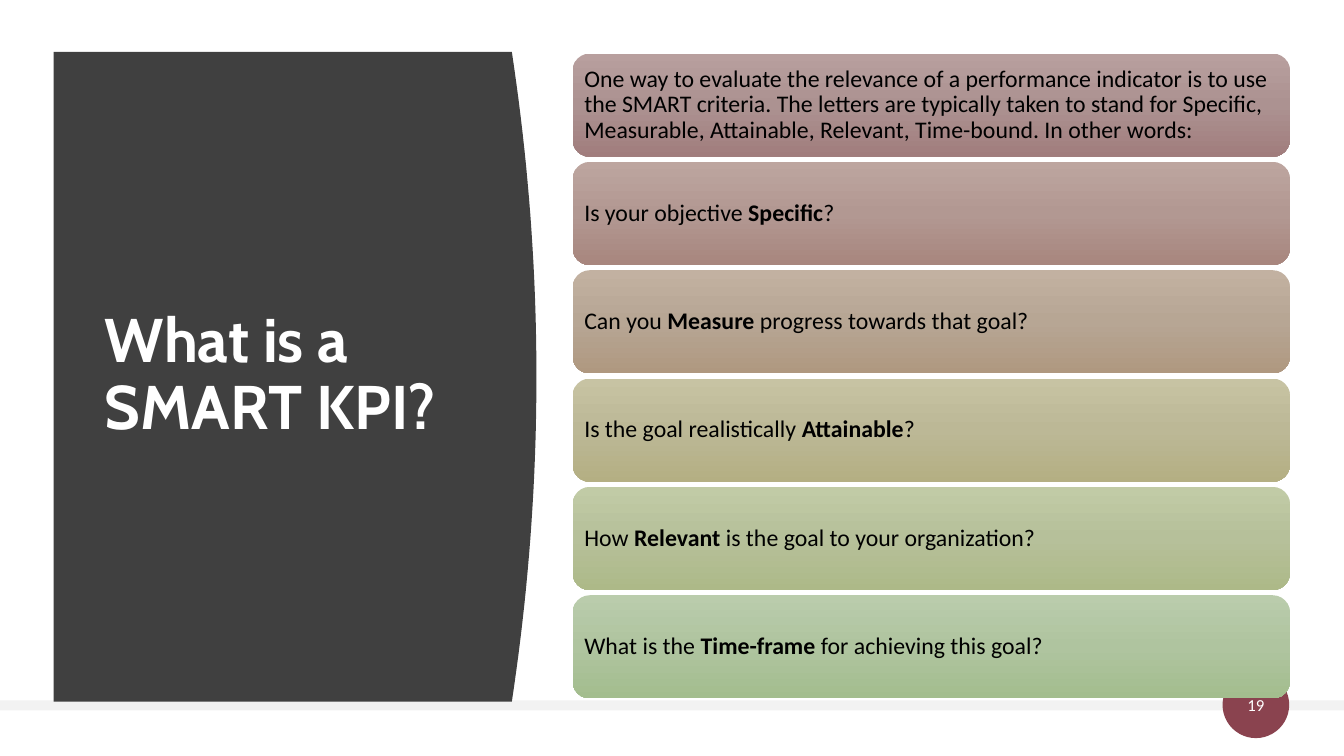
from copy import deepcopy
from dataclasses import dataclass

from pptx import Presentation
from pptx.dml.color import RGBColor
from pptx.enum.shapes import MSO_SHAPE
from pptx.enum.text import MSO_ANCHOR, MSO_AUTO_SIZE, PP_ALIGN
from pptx.oxml.ns import qn
from pptx.util import Cm, Pt

RECTANGLE, OVAL, ROUNDED = MSO_SHAPE.RECTANGLE, MSO_SHAPE.OVAL, MSO_SHAPE.ROUNDED_RECTANGLE
MIDDLE = MSO_ANCHOR.MIDDLE
LEFT, CENTER = PP_ALIGN.LEFT, PP_ALIGN.CENTER
NO_AUTOFIT = MSO_AUTO_SIZE.NONE
TITLE_ONLY = 5


@dataclass(frozen=True)
class Theme:
    heading_font: str = "Cabin"
    body_font: str = "Calibri"
    title_size: int = 44
    card_size: int = 17
    number_size: int = 12
    white: str = "FFFFFF"
    black: str = "000000"
    pane: str = "404040"
    band: str = "F2F2F2"
    badge: str = "8A434F"


THEME = Theme()

# Each card: its runs as (text, bold), then gradient colours from top to bottom
CARDS = [
    ([("One way to evaluate the relevance of a performance indicator is to use the "
       "SMART criteria. The letters are typically taken to stand for Specific, "
       "Measurable, Attainable, Relevant, Time-bound. In other words:", False)],
     ("B89F9E", "AC9291", "A17D7D")),
    ([("Is your objective ", False), ("Specific", True), ("?", False)],
     ("BDA59F", "B29892", "A8867E")),
    ([("Can you ", False), ("Measure", True), (" progress towards that goal?", False)],
     ("C2B1A1", "B7A694", "AF9880")),
    ([("Is the goal realistically ", False), ("Attainable", True), ("?", False)],
     ("C7C3A3", "BCB896", "B4AF83")),
    ([("How ", False), ("Relevant", True), (" is the goal to your organization?", False)],
     ("C1CBA6", "B6C09A", "ADB988")),
    ([("What is the ", False), ("Time-frame", True), (" for achieving this goal?", False)],
     ("BACCAC", "AFC49F", "A3BD8E")),
]
CARD_TOP, CARD_HEIGHT, CARD_PITCH = 1.35, 2.6, 2.73


def fill_solid(shape, color):
    shape.shadow.inherit = False
    shape.line.fill.background()
    shape.fill.solid()
    shape.fill.fore_color.rgb = RGBColor.from_string(color)


def fill_gradient(shape, colors):
    shape.shadow.inherit = False
    shape.line.fill.background()
    shape.fill.gradient()
    shape.fill.gradient_angle = 270
    stop_list = shape._element.spPr.find(".//" + qn("a:gsLst"))
    stop_list.append(deepcopy(stop_list[0]))
    for index, (stop, color) in enumerate(zip(shape.fill.gradient_stops, colors)):
        stop.position = index / (len(colors) - 1)
        stop.color.rgb = RGBColor.from_string(color)


def write(shape, runs, size, font, color, align=LEFT, inset=0.0, spacing=1.0):
    frame = shape.text_frame
    frame.word_wrap = True
    frame.auto_size = NO_AUTOFIT
    frame.vertical_anchor = MIDDLE
    frame.margin_left = frame.margin_right = Cm(inset)
    frame.margin_top = frame.margin_bottom = Cm(inset)
    paragraph = frame.paragraphs[0]
    paragraph.alignment = align
    paragraph.line_spacing = spacing
    for text, bold in runs:
        run = paragraph.add_run()
        run.text = text
        run.font.name = font
        run.font.size = Pt(size)
        run.font.bold = bold
        run.font.color.rgb = RGBColor.from_string(color)


def add_footer(slide, number):
    band = slide.shapes.add_shape(RECTANGLE, 0, Cm(17.65), Cm(33.87), Cm(0.25))
    fill_solid(band, THEME.band)
    badge = slide.shapes.add_shape(OVAL, Cm(30.81), Cm(16.92), Cm(1.68), Cm(1.68))
    fill_solid(badge, THEME.badge)
    write(badge, [(number, False)], THEME.number_size, THEME.body_font, THEME.white, CENTER)


def add_curved_pane(slide):
    left, top, edge, bottom, bulge, steps = 1.35, 1.31, 12.9, 17.68, 0.62, 40
    curve = []
    for step in range(steps + 1):
        t = step / steps
        curve.append((Cm(edge + bulge * 4 * t * (1 - t)), Cm(top + (bottom - top) * t)))
    outline = slide.shapes.build_freeform(Cm(left), Cm(top))
    outline.add_line_segments(curve + [(Cm(left), Cm(bottom))], close=True)
    fill_solid(outline.convert_to_shape(), THEME.pane)


def place_title(slide, text):
    title = slide.shapes.title
    title.left, title.top, title.width, title.height = Cm(2.39), Cm(2.82), Cm(9.5), Cm(13.31)
    write(title, [(text, True)], THEME.title_size, THEME.heading_font, THEME.white,
          inset=0.25, spacing=0.9)
    # Bring the title in front of the pane
    slide.shapes._spTree.append(title._element)


def add_card(slide, top, runs, colors):
    card = slide.shapes.add_shape(ROUNDED, Cm(14.43), Cm(top), Cm(18.08), Cm(CARD_HEIGHT))
    fill_gradient(card, colors)
    write(card, runs, THEME.card_size, THEME.body_font, THEME.black, inset=0.17, spacing=0.9)


def main():
    deck = Presentation()
    deck.slide_width, deck.slide_height = Cm(33.87), Cm(19.05)
    slide = deck.slides.add_slide(deck.slide_layouts[TITLE_ONLY])

    # Footer band and page number
    add_footer(slide, "19")

    # Title pane
    add_curved_pane(slide)
    place_title(slide, "What is a SMART KPI?")

    # SMART criteria cards
    for index, (runs, colors) in enumerate(CARDS):
        add_card(slide, CARD_TOP + index * CARD_PITCH, runs, colors)

    deck.save("out.pptx")


if __name__ == "__main__":
    main()
